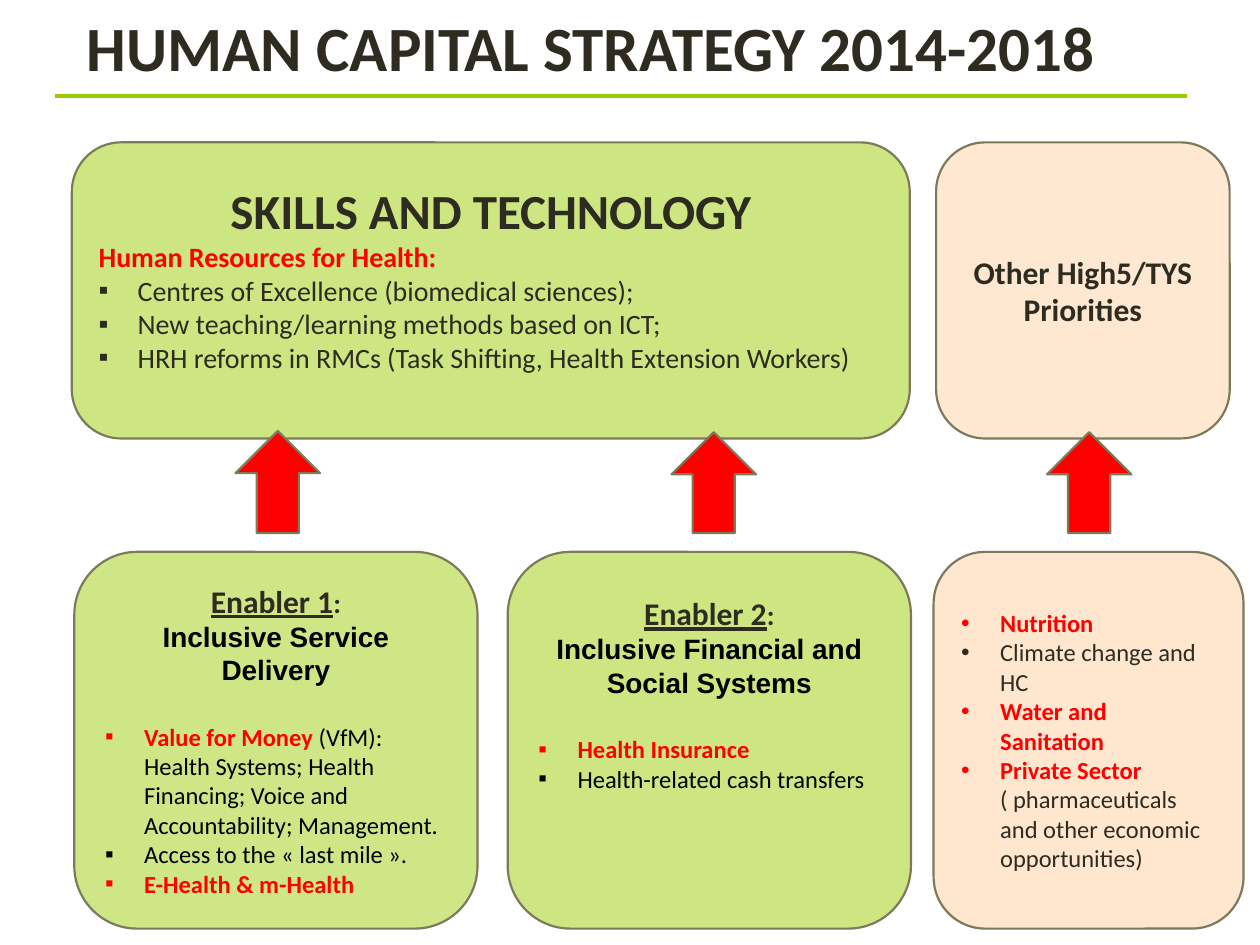
from dataclasses import dataclass

from lxml.etree import SubElement
from pptx import Presentation
from pptx.dml.color import RGBColor
from pptx.enum.shapes import MSO_CONNECTOR as Link, MSO_SHAPE as Form
from pptx.enum.text import MSO_ANCHOR as Anchor, MSO_AUTO_SIZE as Fit, PP_ALIGN as Align
from pptx.oxml.ns import qn
from pptx.shapes.autoshape import Shape
from pptx.slide import Slide
from pptx.text.text import TextFrame
from pptx.util import Inches, Pt

GREEN = RGBColor(0x99, 0xCC, 0x00)
PEACH = RGBColor(0xFF, 0xCC, 0x99)
RED = RGBColor(0xFF, 0x00, 0x00)
DARK = RGBColor(0x2E, 0x2B, 0x21)
BLACK = RGBColor(0x00, 0x00, 0x00)
EDGE = RGBColor(0x7D, 0x7A, 0x5C)

HIGH_ROW = (1.13, 2.35)  # top and height
LOW_ROW = (4.38, 2.99)
INDENT = 0.31


@dataclass
class Run:
    text: str
    size: int
    color: RGBColor = DARK
    bold: bool = True
    line: bool = False
    font: str = "Calibri"


@dataclass
class Para:
    runs: list[Run]
    bullet: str = ""
    align: Align = Align.LEFT
    before: int = 0


@dataclass
class Box:
    left: float
    width: float
    row: tuple[float, float]
    fill: RGBColor
    alpha: int
    paras: list[Para]
    inset: float | None = None  # top inset; None centres the text


@dataclass
class Arrow:
    left: float
    top: float
    height: float


def head(*runs: Run) -> Para:
    return Para(list(runs), align=Align.CENTER)


def square(*runs: Run, before: int = 0) -> Para:
    return Para(list(runs), "▪", before=before)


def dot(*runs: Run) -> Para:
    return Para(list(runs), "•")


def titles(number: int, name: str) -> list[Para]:
    """Give the two heading lines of an enabler box."""
    return [
        head(Run(f"Enabler {number}", 18, line=True), Run(":", 16)),
        head(Run(name, 16, BLACK, font="Arial")),
    ]


SKILLS = [
    head(Run("SKILLS AND TECHNOLOGY", 28)),
    Para([Run("Human Resources for Health:", 16, RED)]),
    square(Run("Centres of Excellence (biomedical sciences);", 16, bold=False)),
    square(Run("New teaching/learning methods based on ICT;", 16, bold=False)),
    square(Run("HRH reforms in RMCs (Task Shifting, Health Extension Workers)", 16, bold=False)),
]
OTHER = [head(Run("Other High5/TYS", 18)), head(Run("Priorities", 18))]
SERVICE = titles(1, "Inclusive Service Delivery") + [
    square(
        Run("Value for Money ", 14, RED),
        Run("(VfM): Health Systems; Health Financing; Voice and Accountability; Management.",
            14, BLACK, False),
        before=20,
    ),
    square(Run("Access to the « last mile ».", 14, BLACK, False)),
    square(Run("E-Health & m-Health", 14, RED)),
]
FINANCE = titles(2, "Inclusive Financial and Social Systems") + [
    square(Run("Health Insurance", 14, RED), before=20),
    square(Run("Health-related cash transfers", 14, BLACK, False)),
]
THEMES = [
    dot(Run("Nutrition", 14, RED)),
    dot(Run("Climate change and HC", 14, bold=False)),
    dot(Run("Water and Sanitation", 14, RED)),
    dot(Run("Private Sector ", 14, RED),
        Run("( pharmaceuticals and other economic opportunities)", 14, bold=False)),
]

BOXES = [
    Box(0.57, 6.65, HIGH_ROW, GREEN, 49, SKILLS, 0.19),
    Box(0.59, 3.2, LOW_ROW, GREEN, 48, SERVICE, 0.09),
    Box(4.03, 3.2, LOW_ROW, GREEN, 49, FINANCE, 0.19),
    Box(7.43, 2.33, HIGH_ROW, PEACH, 44, OTHER),
    Box(7.41, 2.46, LOW_ROW, PEACH, 48, THEMES),
]
ARROWS = [Arrow(1.87, 3.42, 0.81), Arrow(5.33, 3.43, 0.8), Arrow(8.31, 3.43, 0.8)]


def write(frame: TextFrame, paras: list[Para]) -> None:
    frame.word_wrap = True
    for index, item in enumerate(paras):
        para = frame.add_paragraph() if index else frame.paragraphs[0]
        para.alignment = item.align
        para.space_before = Pt(item.before)
        if item.bullet:
            props = para._p.get_or_add_pPr()
            props.set("marL", str(Inches(INDENT)))
            props.set("indent", str(-Inches(INDENT)))
            SubElement(props, qn("a:buFont"), typeface="Arial")
            SubElement(props, qn("a:buChar"), char=item.bullet)
        for part in item.runs:
            run = para.add_run()
            run.text = part.text
            font = run.font
            font.name, font.size = part.font, Pt(part.size)
            font.bold, font.underline = part.bold, part.line
            font.color.rgb = part.color


def paint(shape: Shape, color: RGBColor, alpha: int = 100) -> None:
    shape.shadow.inherit = False
    shape.fill.solid()
    shape.fill.fore_color.rgb = color
    if alpha < 100:
        tint = shape._element.spPr.find(qn("a:solidFill"))[0]
        SubElement(tint, qn("a:alpha"), val=str(alpha * 1000))
    shape.line.color.rgb = EDGE
    shape.line.width = Pt(1.25)


def draw_box(slide: Slide, box: Box) -> None:
    top, height = box.row
    shape = slide.shapes.add_shape(
        Form.ROUNDED_RECTANGLE, Inches(box.left), Inches(top), Inches(box.width), Inches(height))
    paint(shape, box.fill, box.alpha)
    frame = shape.text_frame
    frame.vertical_anchor = Anchor.MIDDLE
    if box.inset is not None:
        frame.vertical_anchor = Anchor.TOP
        frame.margin_top = Inches(box.inset)
    write(frame, box.paras)


def draw_arrow(slide: Slide, arrow: Arrow) -> None:
    shape = slide.shapes.add_shape(
        Form.UP_ARROW, Inches(arrow.left), Inches(arrow.top), Inches(0.67), Inches(arrow.height))
    paint(shape, RED)


def draw_title(slide: Slide) -> None:
    title = slide.shapes.title
    title.left, title.top = Inches(0.59), Inches(0.02)
    title.width, title.height = Inches(8.84), Inches(0.71)
    frame = title.text_frame
    frame.auto_size = Fit.NONE
    frame.vertical_anchor = Anchor.TOP
    write(frame, [Para([Run("HUMAN CAPITAL STRATEGY 2014-2018", 36)])])


def draw_rule(slide: Slide) -> None:
    rule = slide.shapes.add_connector(
        Link.STRAIGHT, Inches(0.44), Inches(0.76), Inches(9.42), Inches(0.76))
    rule.line.color.rgb = GREEN
    rule.line.width = Pt(2.25)
    SubElement(rule._element.spPr, qn("a:effectLst"))


def main() -> None:
    deck = Presentation()
    deck.slide_width, deck.slide_height = Inches(10), Inches(7.5)
    slide = deck.slides.add_slide(deck.slide_layouts[5])
    draw_title(slide)
    for box in BOXES:
        draw_box(slide, box)
    for arrow in ARROWS:
        draw_arrow(slide, arrow)
    draw_rule(slide)
    deck.save("out.pptx")


if __name__ == "__main__":
    main()
